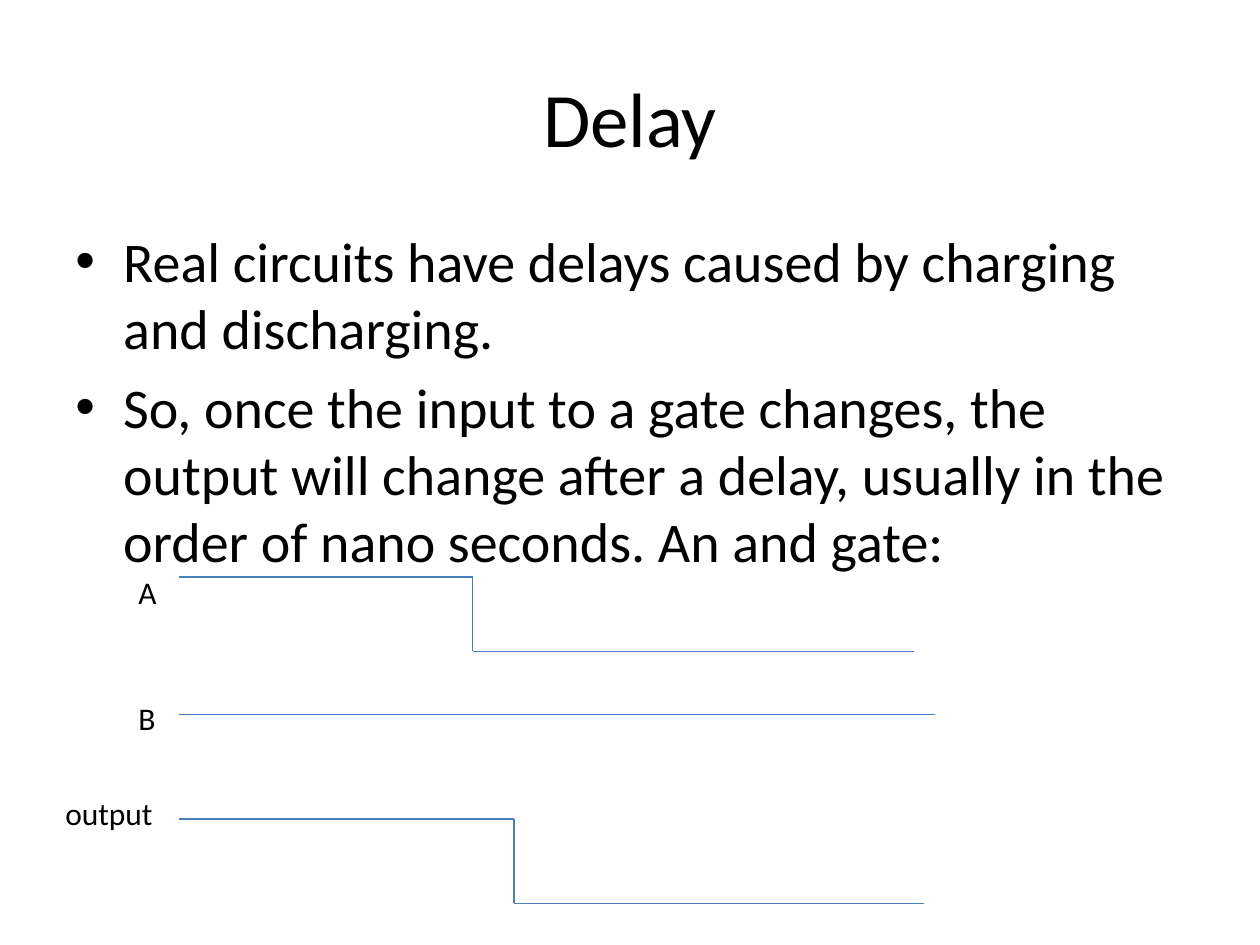
"""Build a slide on gate delay with a timing diagram."""
from itertools import pairwise

from lxml import etree
from pptx import Presentation
from pptx.dml.color import RGBColor
from pptx.enum.shapes import MSO_CONNECTOR
from pptx.enum.text import MSO_ANCHOR, MSO_AUTO_SIZE, PP_ALIGN
from pptx.oxml.ns import qn
from pptx.util import Inches, Pt

STRAIGHT = MSO_CONNECTOR.STRAIGHT
TOP, MIDDLE = MSO_ANCHOR.TOP, MSO_ANCHOR.MIDDLE
LEFT, CENTER = PP_ALIGN.LEFT, PP_ALIGN.CENTER
FIT_SHAPE = MSO_AUTO_SIZE.SHAPE_TO_FIT_TEXT
BLACK = RGBColor(0x00, 0x00, 0x00)
SIGNAL_BLUE = RGBColor(0x4B, 0x7E, 0xBC)

TITLE = "Delay"
BULLETS = [
    "Real circuits have delays caused by charging and discharging.",
    "So, once the input to a gate changes, the output will change after a delay, "
    "usually in the order of nano seconds. An and gate:",
]
LABELS = [
    ("A", (1, 4.5, 0.35, 0.4)),
    ("B", (1, 5.5, 0.34, 0.4)),
    ("output", (0.42, 6.25, 0.9, 0.4)),
]
SIGNAL_START = 1.42
SIGNALS = [
    {"high": 4.58, "low": 5.17, "fall": 3.75, "end": 7.25},
    {"high": 5.67, "end": 7.42},
    {"high": 6.5, "low": 7.17, "fall": 4.08, "end": 7.33},
]


def add_text(slide, box, lines, size, align=LEFT, **frame_format):
    shape = slide.shapes.add_textbox(*map(Inches, box))
    frame = shape.text_frame
    frame.text = "\n".join(lines)
    for name, value in frame_format.items():
        setattr(frame, name, value)
    for paragraph in frame.paragraphs:
        paragraph.alignment = align
        font = paragraph.runs[0].font
        for name, value in {"name": "Calibri", "size": Pt(size)}.items():
            setattr(font, name, value)
        font.color.rgb = BLACK
    return frame


def add_bullet(paragraph):
    paragraph.space_before = Pt(6.4)
    properties = paragraph._p.get_or_add_pPr()
    properties.set("marL", str(Inches(0.38)))
    properties.set("indent", str(-Inches(0.38)))
    etree.SubElement(properties, qn("a:buFont"), typeface="Arial")
    etree.SubElement(properties, qn("a:buChar"), char="•")


def signal_points(signal):
    points = [(SIGNAL_START, signal["high"])]
    if "fall" in signal:
        points += [(signal["fall"], signal["high"]), (signal["fall"], signal["low"])]
    return points + [(signal["end"], signal.get("low", signal["high"]))]


def add_signal(slide, signal):
    for start, end in pairwise(signal_points(signal)):
        line = slide.shapes.add_connector(STRAIGHT, *map(Inches, start + end))
        line.line.color.rgb = SIGNAL_BLUE
        line.line.width = Pt(0.75)
        etree.SubElement(line._element.spPr, qn("a:effectLst"))


def main():
    presentation = Presentation()
    presentation.slide_width, presentation.slide_height = Inches(10), Inches(7.5)
    slide = presentation.slides.add_slide(presentation.slide_layouts[6])
    add_text(slide, (0.5, 0.3, 9, 1.25), [TITLE], 44, CENTER,
             word_wrap=True, vertical_anchor=MIDDLE)
    body = add_text(slide, (0.5, 1.75, 9, 2.92), BULLETS, 32,
                    word_wrap=True, vertical_anchor=TOP)
    for paragraph in body.paragraphs:
        add_bullet(paragraph)
    for signal in SIGNALS:
        add_signal(slide, signal)
    for label, box in LABELS:
        add_text(slide, box, [label], 18, word_wrap=False, auto_size=FIT_SHAPE)
    presentation.save("out.pptx")


if __name__ == "__main__":
    main()
